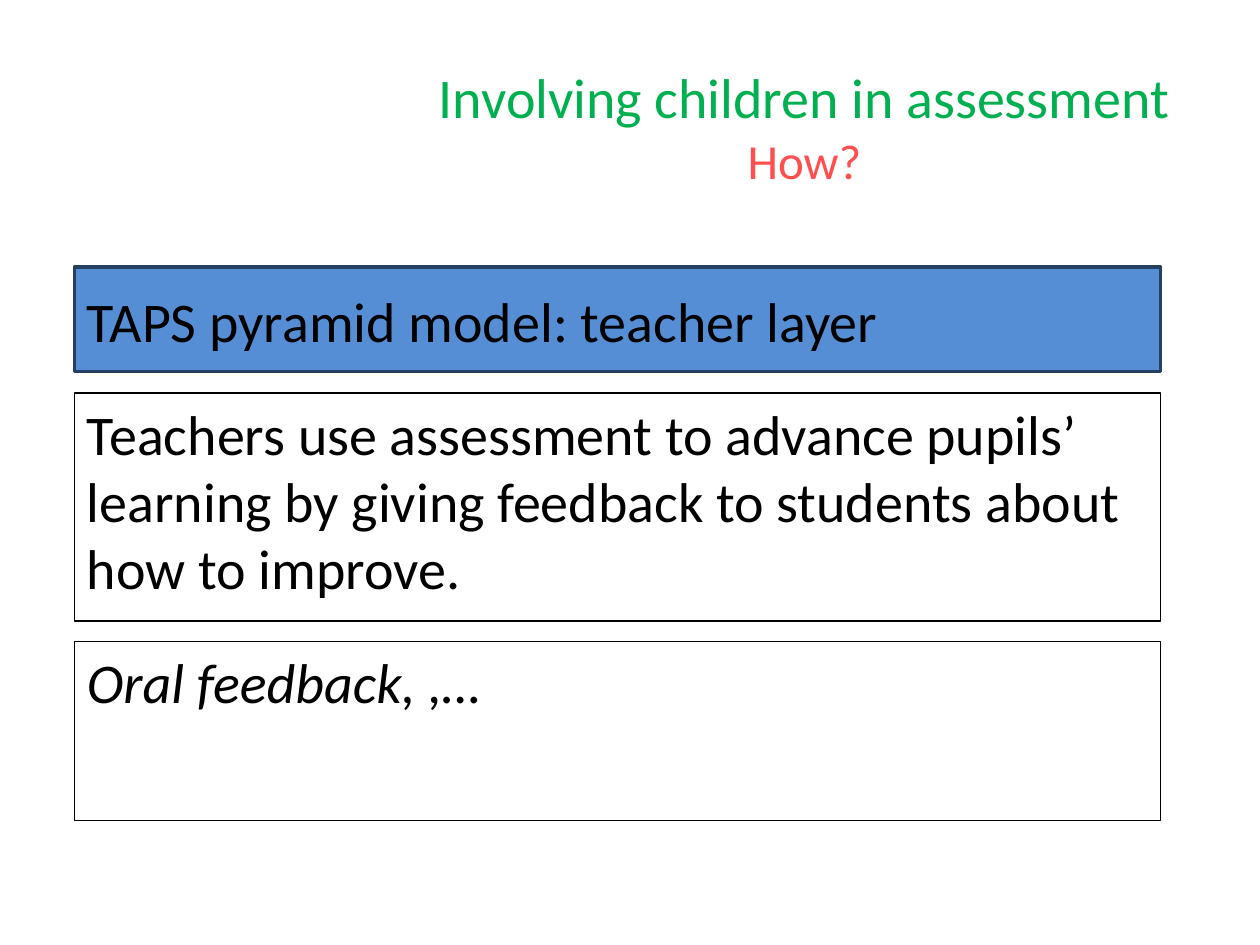
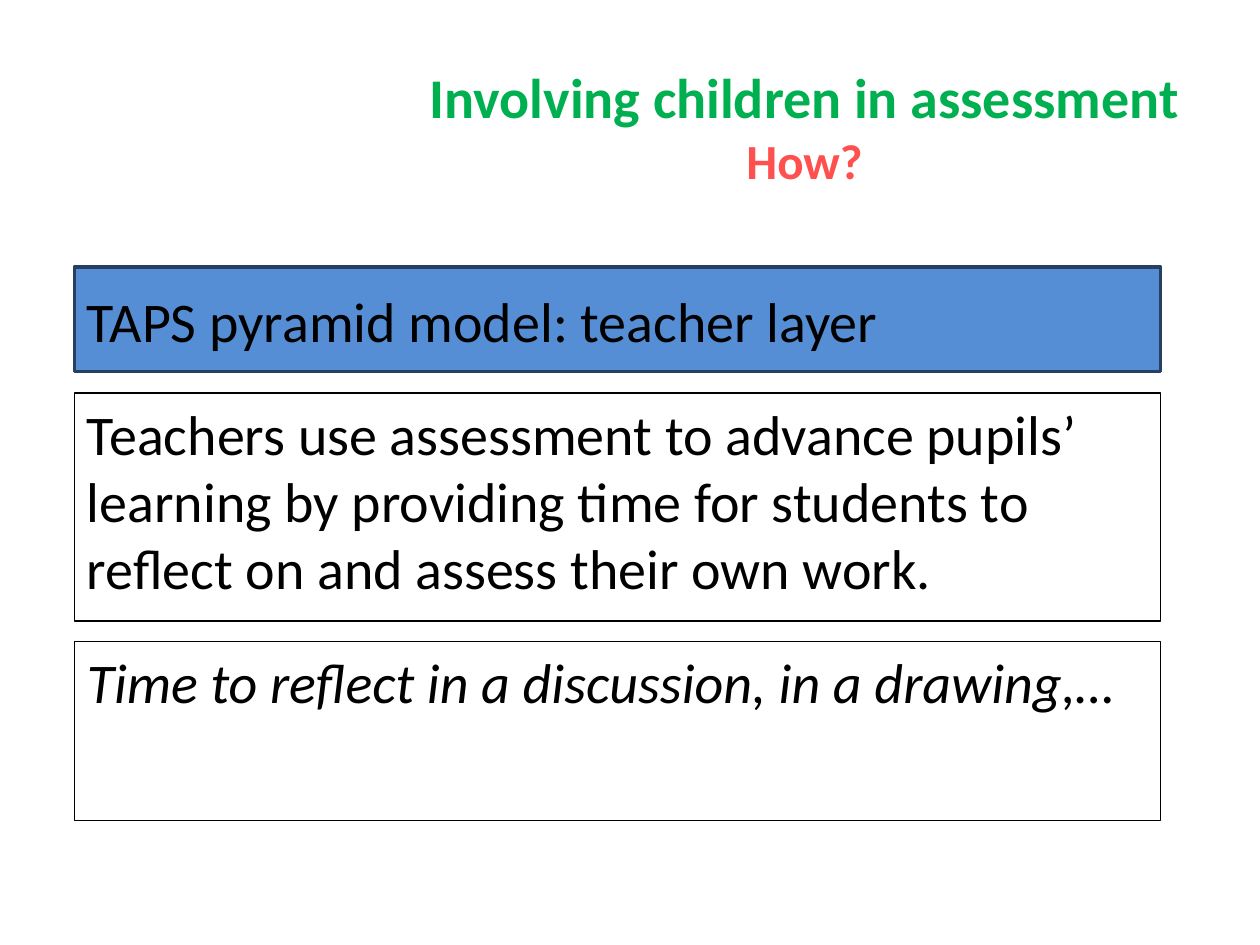
from lxml import etree
from pptx import Presentation
from pptx.dml.color import RGBColor
from pptx.enum import shapes, text
from pptx.oxml import ns
from pptx.util import Inches, Pt

GREEN = RGBColor(0x00, 0xB0, 0x50)
CORAL = RGBColor(0xFF, 0x50, 0x50)
BLUE = RGBColor(0x55, 0x8E, 0xD5)
NAVY = RGBColor(0x25, 0x40, 0x61)
BLACK = RGBColor(0x00, 0x00, 0x00)

# Boxes: left, top, width, height in inches
TITLE_BOX = (3.27, 0.3, 6.23, 1.4)
COLUMN_LEFT, COLUMN_WIDTH = 0.59, 8.62
LAYER_BOX, STATEMENT_BOX, EXAMPLE_BOX = [
    (COLUMN_LEFT, top, COLUMN_WIDTH, height)
    for top, height in ((2.12, 0.83), (3.12, 1.81), (5.09, 1.42))
]
BODY_FONT = {"name": "Calibri", "size": Pt(32)}

SLIDES = [
    {
        "bold": False,
        "statement": "Teachers use assessment to advance pupils’ learning by "
                     "giving feedback to students about how to improve.",
        "example": "Oral feedback, ,…",
    },
    {
        "bold": True,
        "statement": "Teachers use assessment to advance pupils’ learning by "
                     "providing time for students to reflect on and assess "
                     "their own work.",
        "example": "Time to reflect in a discussion, in a drawing,…",
    },
]


def set_font(font, color, **formats):
    for name, value in {**BODY_FONT, **formats}.items():
        setattr(font, name, value)
    font.color.rgb = color


def place(shape, box):
    for name, value in zip(("left", "top", "width", "height"), box):
        setattr(shape, name, Inches(value))


def add_title(slide, box, bold):
    title = slide.shapes.title
    place(title, box)
    frame = title.text_frame
    frame.auto_size = text.MSO_AUTO_SIZE.NONE
    frame.vertical_anchor = text.MSO_ANCHOR.MIDDLE
    paragraph = frame.paragraphs[0]
    paragraph.alignment = text.PP_ALIGN.CENTER
    topic = paragraph.add_run()
    topic.text = "Involving children in assessment"
    set_font(topic.font, GREEN, bold=bold)
    paragraph.add_line_break()
    question = paragraph.add_run()
    question.text = "How?"
    set_font(question.font, CORAL, bold=bold, size=Pt(28))


def fill_panel(shape, wording, line_color=BLACK, line_width=0.75,
               fill_color=None, spacing=1.0, italic=False):
    """Outline the panel and write one unbulleted paragraph in it."""
    shape.line.color.rgb = line_color
    shape.line.width = Pt(line_width)
    if fill_color is None:
        shape.fill.background()
    else:
        shape.fill.solid()
        shape.fill.fore_color.rgb = fill_color
    frame = shape.text_frame
    frame.word_wrap = True
    frame.auto_size = text.MSO_AUTO_SIZE.NONE
    frame.vertical_anchor = text.MSO_ANCHOR.TOP
    paragraph = frame.paragraphs[0]
    paragraph.text = wording
    properties = paragraph._p.get_or_add_pPr()
    properties.set("marL", "0")
    properties.set("indent", "0")
    etree.SubElement(properties, ns.qn("a:buNone"))
    paragraph.alignment = text.PP_ALIGN.LEFT
    paragraph.line_spacing = spacing
    paragraph.space_before = Pt(0)
    set_font(paragraph.runs[0].font, BLACK, italic=italic)


def add_panel(slide, box, wording, **formats):
    panel = slide.shapes.add_shape(shapes.MSO_SHAPE.RECTANGLE,
                                   *map(Inches, box))
    panel.shadow.inherit = False
    fill_panel(panel, wording, **formats)


def add_assessment_slide(presentation, content):
    slide = presentation.slides.add_slide(presentation.slide_layouts[1])
    add_title(slide, TITLE_BOX, content["bold"])

    # Statement in the body placeholder
    body = slide.placeholders[1]
    place(body, STATEMENT_BOX)
    fill_panel(body, content["statement"])

    # Layer heading and example
    add_panel(slide, LAYER_BOX, "TAPS pyramid model: teacher layer",
              line_color=NAVY, line_width=2, fill_color=BLUE, spacing=1.2)
    add_panel(slide, EXAMPLE_BOX, content["example"], italic=True)


def main():
    presentation = Presentation()
    presentation.slide_width = Inches(10)
    presentation.slide_height = Inches(7.5)
    for content in SLIDES:
        add_assessment_slide(presentation, content)
    presentation.save("out.pptx")


if __name__ == "__main__":
    main()
